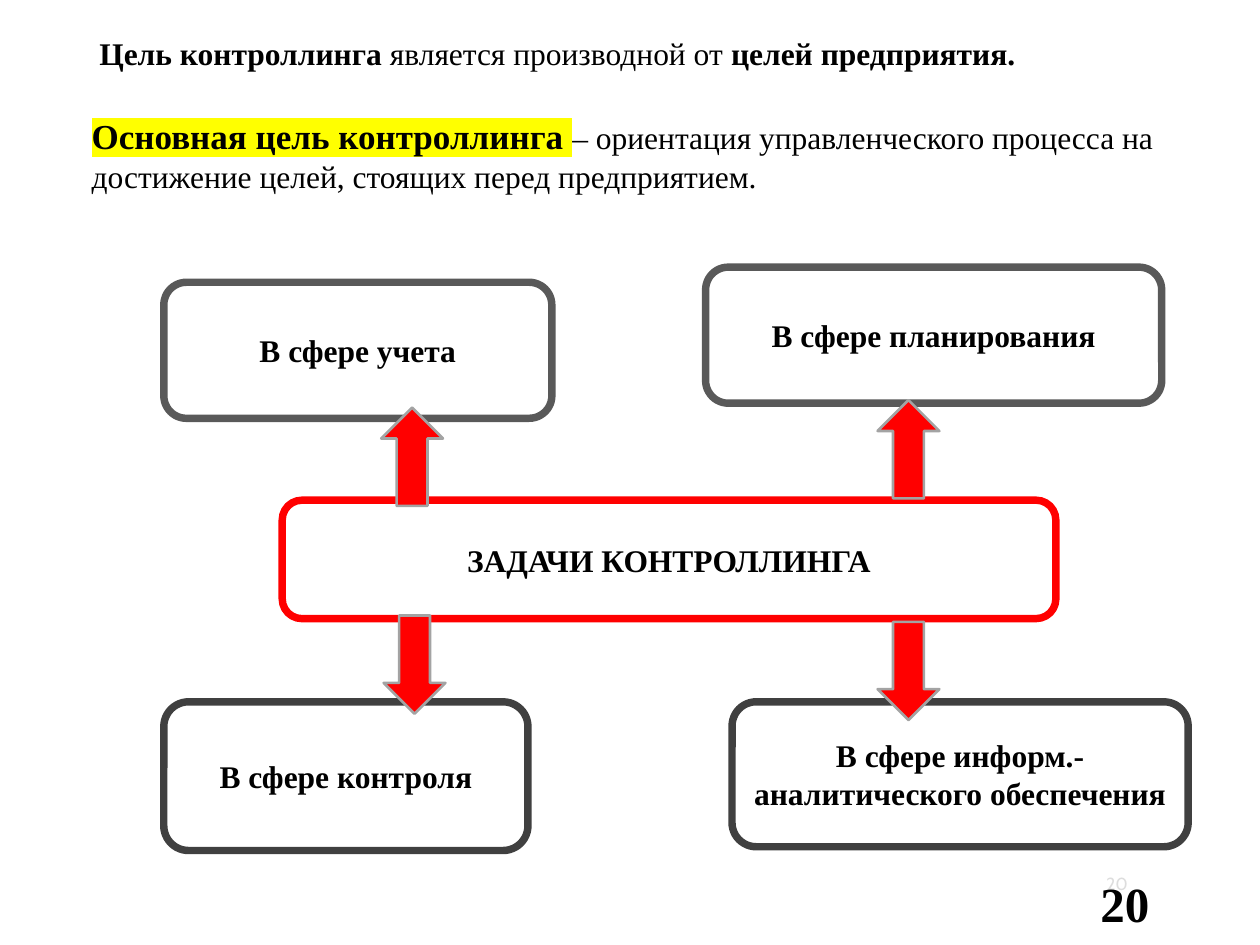
import pptx
import pptx.dml.color
import pptx.enum.shapes
import pptx.enum.text
import pptx.oxml
import pptx.oxml.ns
import pptx.util
from pptx.util import Inches

COLORS = {
    "black": "000000",
    "white": "FFFFFF",
    "red": "FF0000",
    "yellow": "FFFF00",
    "dark_gray": "404040",
    "gray": "595959",
    "arrow_edge": "A3A3A3",
    "pale_gray": "DDDDDD",
}
SERIF = "Times New Roman"
ALIGN = pptx.enum.text.PP_ALIGN
ANCHOR = pptx.enum.text.MSO_ANCHOR
SHAPE = pptx.enum.shapes.MSO_SHAPE


def rgb(color):
    return pptx.dml.color.RGBColor.from_string(COLORS[color])


def highlight(run, color):
    element = pptx.oxml.parse_xml(
        f'<a:highlight {pptx.oxml.ns.nsdecls("a")}>'
        f'<a:srgbClr val="{COLORS[color]}"/></a:highlight>'
    )
    run.font.fill._xPr.find(pptx.oxml.ns.qn("a:solidFill")).addnext(element)


def add_run(paragraph, text, size=18, bold=True, font=SERIF, color="black"):
    run = paragraph.add_run()
    run.text = text
    run.font.size = pptx.util.Pt(size)
    run.font.bold = bold
    run.font.name = font
    run.font.color.rgb = rgb(color)
    return run


def add_text_box(slide, left, top, width, height, align=ALIGN.LEFT, anchor=ANCHOR.TOP):
    box = slide.shapes.add_textbox(Inches(left), Inches(top), Inches(width), Inches(height))
    frame = box.text_frame
    frame.word_wrap = True
    frame.vertical_anchor = anchor
    frame.paragraphs[0].alignment = align
    return frame.paragraphs[0]


def add_shape(slide, kind, left, top, width, height, fill, line, line_width):
    shape = slide.shapes.add_shape(
        kind, Inches(left), Inches(top), Inches(width), Inches(height)
    )
    shape.shadow.inherit = False
    shape.fill.solid()
    shape.fill.fore_color.rgb = rgb(fill)
    shape.line.color.rgb = rgb(line)
    shape.line.width = pptx.util.Pt(line_width)
    return shape


def add_box(slide, text, left, top, width, height, line):
    shape = add_shape(
        slide, SHAPE.ROUNDED_RECTANGLE, left, top, width, height, "white", line, 4.25
    )
    frame = shape.text_frame
    frame.word_wrap = True
    frame.vertical_anchor = ANCHOR.MIDDLE
    frame.paragraphs[0].alignment = ALIGN.CENTER
    add_run(frame.paragraphs[0], text)


def add_arrow(slide, left, top, rotation):
    arrow = add_shape(
        slide, SHAPE.RIGHT_ARROW, left, top, 0.78, 0.49, "red", "arrow_edge", 1.5
    )
    arrow.rotation = rotation


def add_page_number(slide, left, top, **style):
    paragraph = add_text_box(slide, left, top, 1.4, 0.4, ALIGN.RIGHT, ANCHOR.MIDDLE)
    add_run(paragraph, "20", **style)


def main():
    presentation = pptx.Presentation()
    presentation.slide_width = Inches(10)
    presentation.slide_height = Inches(7.5)
    slide = presentation.slides.add_slide(presentation.slide_layouts[6])

    add_page_number(slide, 7.65, 6.81, size=10, bold=False, font="Cabin", color="pale_gray")

    main_goal = add_text_box(slide, 0.63, 0.86, 8.74, 0.74)
    highlight(add_run(main_goal, "Основная цель контроллинга ", size=20), "yellow")
    add_run(
        main_goal,
        "– ориентация управленческого процесса на достижение целей, "
        "стоящих перед предприятием.",
        bold=False,
    )

    for box in (
        ("ЗАДАЧИ КОНТРОЛЛИНГА", 2.24, 3.97, 6.14, 0.94, "red"),
        ("В сфере учета", 1.3, 2.24, 3.08, 1.08, "gray"),
        ("В сфере планирования", 5.6, 2.12, 3.62, 1.08, "gray"),
        ("В сфере контроля", 1.3, 5.57, 2.89, 1.18, "dark_gray"),
        ("В сфере информ.- аналитического обеспечения", 5.81, 5.57, 3.62, 1.15, "dark_gray"),
    ):
        add_box(slide, *box)

    for left, top, rotation in (
        (2.88, 3.38, 270),
        (6.82, 3.32, 270),
        (2.9, 5.03, 90),
        (6.82, 5.08, 90),
    ):
        add_arrow(slide, left, top, rotation)

    goal = add_text_box(slide, 0.69, 0.22, 8.74, 0.4)
    add_run(goal, "Цель контроллинга ")
    add_run(goal, "является производной от ", bold=False)
    add_run(goal, "целей предприятия.")

    add_page_number(slide, 7.82, 6.97, size=28)
    presentation.save("out.pptx")


if __name__ == "__main__":
    main()
